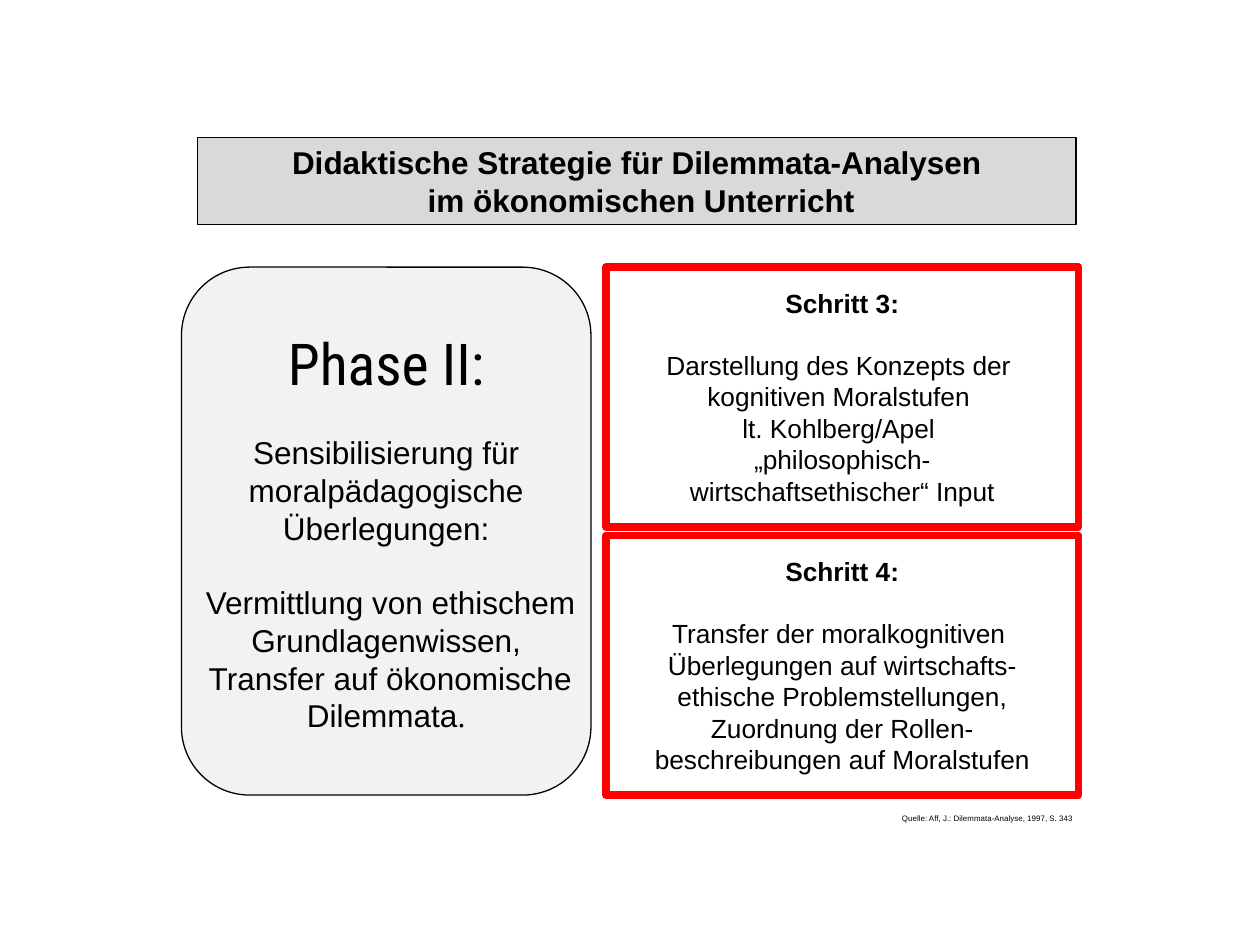
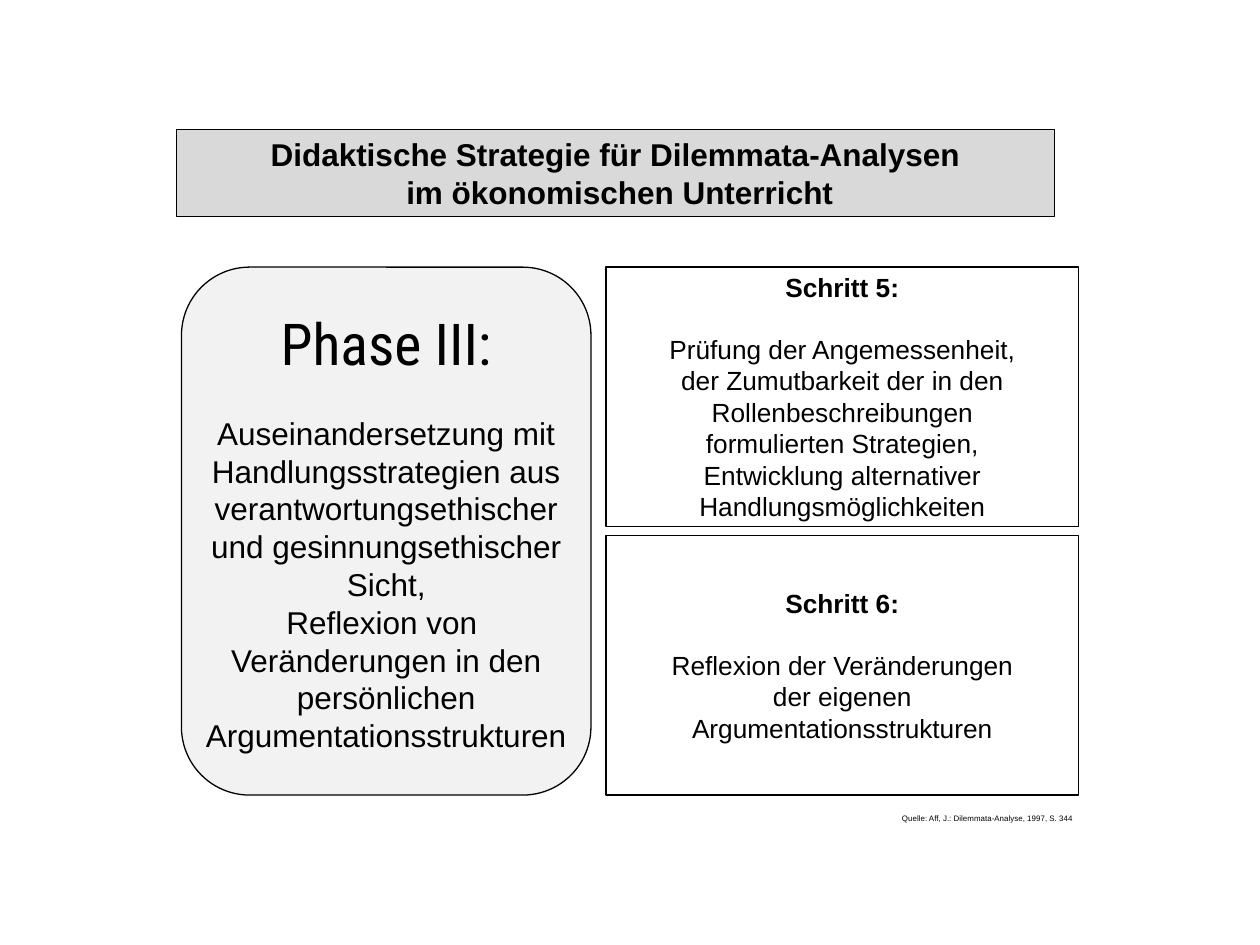
from dataclasses import dataclass

from pptx import Presentation
from pptx.dml.color import RGBColor
from pptx.enum import shapes, text as t
from pptx.util import Inches, Pt


@dataclass(frozen=True)
class Theme:
    ink: str = "000000"
    paper: str = "FFFFFF"
    title_fill: str = "D9D9D9"
    phase_fill: str = "F2F2F2"
    highlight: str = "FF0000"
    body_font: str = "Arial"
    phase_font: str = "Roboto Condensed"
    stop_font: str = "Times New Roman"
    phase_size: float = 33
    large: float = 18
    step_size: float = 15
    source_size: float = 4.5
    thin: float = 0.75
    thick: float = 4.5
    line_pitch: float = 1.15


theme = Theme()


def add_panel(page, kind, place, fill, line=theme.ink, width=theme.thin):
    panel = page.shapes.add_shape(kind, *map(Inches, place))
    panel.shadow.inherit = False
    panel.fill.solid()
    panel.fill.fore_color.rgb = RGBColor.from_string(fill)
    panel.line.color.rgb = RGBColor.from_string(line)
    panel.line.width = Pt(width)
    panel.text_frame.word_wrap = False
    panel.text_frame.vertical_anchor = t.MSO_ANCHOR.MIDDLE
    return panel


def write(box, text, size=theme.large, font=theme.body_font, bold=False,
          align=t.PP_ALIGN.CENTER, gap=False, same_line=False):
    """Add a line of text; gap leaves one line free above it."""
    frame = box.text_frame
    para = frame.paragraphs[-1]
    if not same_line:
        if para.runs:
            para = frame.add_paragraph()
        para.alignment = align
        para.space_before = Pt(size * theme.line_pitch if gap else 0)
    span = para.add_run()
    span.text = text
    span.font.size = Pt(size)
    span.font.name = font
    span.font.bold = bold
    span.font.color.rgb = RGBColor.from_string(theme.ink)


TITLE = ["Didaktische Strategie für Dilemmata-Analysen", " im ökonomischen Unterricht"]
TOP, STEP_HEIGHT, STEP_PITCH = 2.12, 2.06, 2.13

# Each block of lines is set off by a free line above it.
PAGES = [
    dict(
        title_at=(1.57, 1.09), border=(theme.highlight, theme.thick), source_page=343,
        phase="Phase II:", full_stop=True,
        blocks=[
            ["Sensibilisierung für", "moralpädagogische", "Überlegungen:"],
            [" Vermittlung von ethischem", "Grundlagenwissen,",
             " Transfer auf ökonomische", "Dilemmata"],
        ],
        steps={
            "Schritt 3:": ["Darstellung des Konzepts der ", "kognitiven Moralstufen ",
                           "lt. Kohlberg/Apel ", "„philosophisch-",
                           "wirtschaftsethischer“ Input"],
            "Schritt 4:": ["Transfer der moralkognitiven ",
                           "Überlegungen auf wirtschafts-",
                           "ethische Problemstellungen,", "Zuordnung der Rollen-",
                           "beschreibungen auf Moralstufen"],
        },
    ),
    dict(
        title_at=(1.4, 1.03), border=(theme.ink, theme.thin), source_page=344,
        phase="Phase III:", full_stop=False,
        blocks=[
            ["Auseinandersetzung mit", "Handlungsstrategien aus",
             "verantwortungsethischer", "und gesinnungsethischer", "Sicht,",
             "Reflexion von ", "Veränderungen in den", "persönlichen",
             "Argumentationsstrukturen"],
        ],
        steps={
            "Schritt 5:": ["Prüfung der Angemessenheit,", "der Zumutbarkeit der in den",
                           "Rollenbeschreibungen", "formulierten Strategien,",
                           "Entwicklung alternativer", "Handlungsmöglichkeiten"],
            "Schritt 6:": ["Reflexion der Veränderungen", "der eigenen",
                           "Argumentationsstrukturen"],
        },
    ),
]

deck = Presentation()
deck.slide_width, deck.slide_height = Inches(10), Inches(7.5)

for content in PAGES:
    page = deck.slides.add_slide(deck.slide_layouts[6])

    phase_box = add_panel(page, shapes.MSO_SHAPE.ROUNDED_RECTANGLE,
                          (1.44, TOP, 3.25, 4.19), theme.phase_fill)
    write(phase_box, content["phase"], size=theme.phase_size, font=theme.phase_font)
    for block in content["blocks"]:
        for index, line in enumerate(block):
            write(phase_box, line, gap=index == 0)
    if content["full_stop"]:
        write(phase_box, ".", font=theme.stop_font, same_line=True)

    for row, (heading, lines) in enumerate(content["steps"].items()):
        step_box = add_panel(page, shapes.MSO_SHAPE.RECTANGLE,
                             (4.81, TOP + row * STEP_PITCH, 3.75, STEP_HEIGHT),
                             theme.paper, *content["border"])
        write(step_box, heading, size=theme.step_size, bold=True)
        for index, line in enumerate(lines):
            write(step_box, line, size=theme.step_size, gap=index == 0)

    source_box = page.shapes.add_textbox(*map(Inches, (7.06, 6.41, 2.01, 0.18)))
    source_box.text_frame.word_wrap = True
    source_box.text_frame.auto_size = t.MSO_AUTO_SIZE.SHAPE_TO_FIT_TEXT
    write(source_box, f"Quelle: Aff, J.: Dilemmata-Analyse, 1997, S. {content['source_page']}",
          size=theme.source_size, align=t.PP_ALIGN.LEFT)

    title_box = add_panel(page, shapes.MSO_SHAPE.RECTANGLE,
                          (*content["title_at"], 6.97, 0.69), theme.title_fill)
    for line in TITLE:
        write(title_box, line, bold=True)

deck.save("out.pptx")
